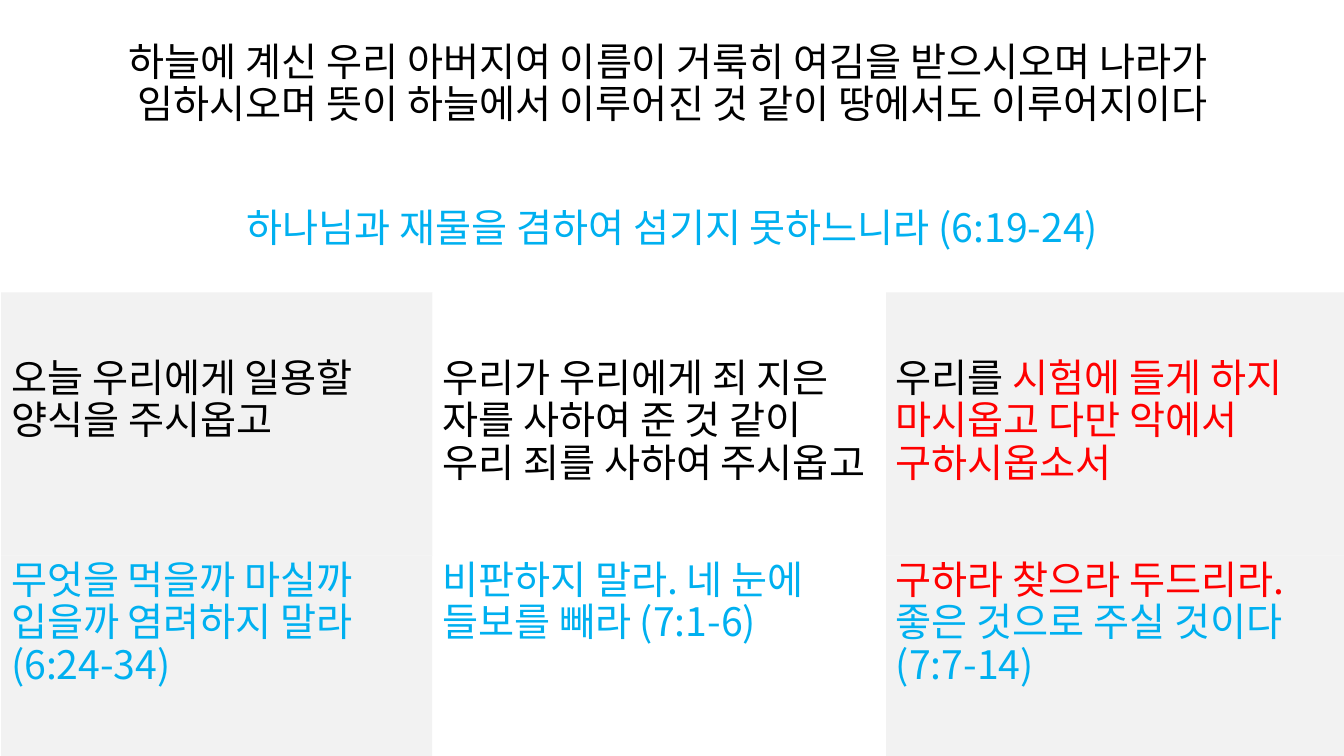
import pptx
import pptx.util
import pptx.dml.color
import pptx.enum.shapes
import pptx.enum.text
import pptx.oxml
import lxml.etree

Cm = pptx.util.Cm
ANCHOR = pptx.enum.text.MSO_ANCHOR
CENTER = pptx.enum.text.PP_ALIGN.CENTER
LEFT = pptx.enum.text.PP_ALIGN.LEFT
FONT = "Noto Sans CJK KR"
BLACK, RED, BLUE = "000000", "FF0000", "00B0F0"
GREY, WHITE = "F2F2F2", "FFFFFF"


def color(hex_text):
    return pptx.dml.color.RGBColor.from_string(hex_text)


def write(part, box, lines, align, anchor, top_inset=0.13):
    part.left, part.top, part.width, part.height = [Cm(length) for length in box]
    frame = part.text_frame
    frame.word_wrap = True
    frame.auto_size = pptx.enum.text.MSO_AUTO_SIZE.NONE
    frame.vertical_anchor = anchor
    frame.margin_top = Cm(top_inset)
    paragraph = frame.paragraphs[0]
    paragraph.alignment = align
    paragraph.line_spacing = 0.9
    paragraph.space_before = pptx.util.Pt(0)
    properties = paragraph._p.get_or_add_pPr()
    properties.set("marL", "0")
    properties.set("indent", "0")
    lxml.etree.SubElement(properties, pptx.oxml.ns.qn("a:buNone"))
    for number, line in enumerate(lines):
        if number:
            paragraph.add_line_break()
        for words, tint in line:
            run = paragraph.add_run()
            run.text = words
            run.font.size = pptx.util.Pt(28)
            run.font.name = FONT
            run.font.color.rgb = color(tint)
            east_asian = lxml.etree.SubElement(run._r.rPr, pptx.oxml.ns.qn("a:ea"))
            east_asian.set("typeface", FONT)


deck = pptx.Presentation()
deck.slide_width, deck.slide_height = Cm(33.87), Cm(19.05)
slide = deck.slides.add_slide(deck.slide_layouts[3])
title, daily_bread, forgiveness = slide.placeholders

write(title, (0.03, 0.1, 33.83, 4.06), [
    [("하늘에 계신 우리 아버지여 이름이 거룩히 여김을 받으시오며 나라가 ", BLACK)],
    [("임하시오며 뜻이 하늘에서 이루어진 것 같이 땅에서도 이루어지이다", BLACK)],
], CENTER, ANCHOR.MIDDLE)

treasure = slide.shapes.add_textbox(0, 0, 0, 0)
write(treasure, (0.03, 4.16, 33.83, 3.28),
      [[("하나님과 재물을 겸하여 섬기지 못하느니라 (6:19-24)", BLUE)]],
      CENTER, ANCHOR.MIDDLE)

columns = [
    (daily_bread, 0.03, 10.87, GREY,
     [("오늘 우리에게 일용할 양식을 주시옵고", BLACK)],
     [("무엇을 먹을까 마실까 입을까 염려하지 말라 (6:24-34)", BLUE)]),
    (forgiveness, 10.9, 11.43, WHITE,
     [("우리가 우리에게 죄 지은 자를 사하여 준 것 같이 우리 죄를 사하여 주시옵고", BLACK)],
     [("비판하지 말라. 네 눈에 들보를 빼라 (7:1-6)", BLUE)]),
    (None, 22.33, 11.54, GREY,
     [("우리를 ", BLACK), ("시험에 들게 하지 마시옵고 다만 악에서 구하시옵소서", RED)],
     [("구하라 찾으라 두드리라. ", RED), ("좋은 것으로 주실 것이다 (7:7-14)", BLUE)]),
]
for petition, left, width, fill, prayer, teaching in columns:
    rows = [(petition, 7.37, 6.63, prayer, 1.67), (None, 14, 5.05, teaching, 0.13)]
    for panel, top, height, words, inset in rows:
        if panel is None:
            panel = slide.shapes.add_shape(
                pptx.enum.shapes.MSO_SHAPE.RECTANGLE, 0, 0, 0, 0)
            panel.shadow.inherit = False
        panel.fill.solid()
        panel.fill.fore_color.rgb = color(fill)
        panel.line.fill.background()
        write(panel, (left, top, width, height), [words], LEFT, ANCHOR.TOP, inset)

for leftover in list(slide.placeholders):
    if not leftover.text_frame.text:
        leftover._element.getparent().remove(leftover._element)

deck.save("out.pptx")
